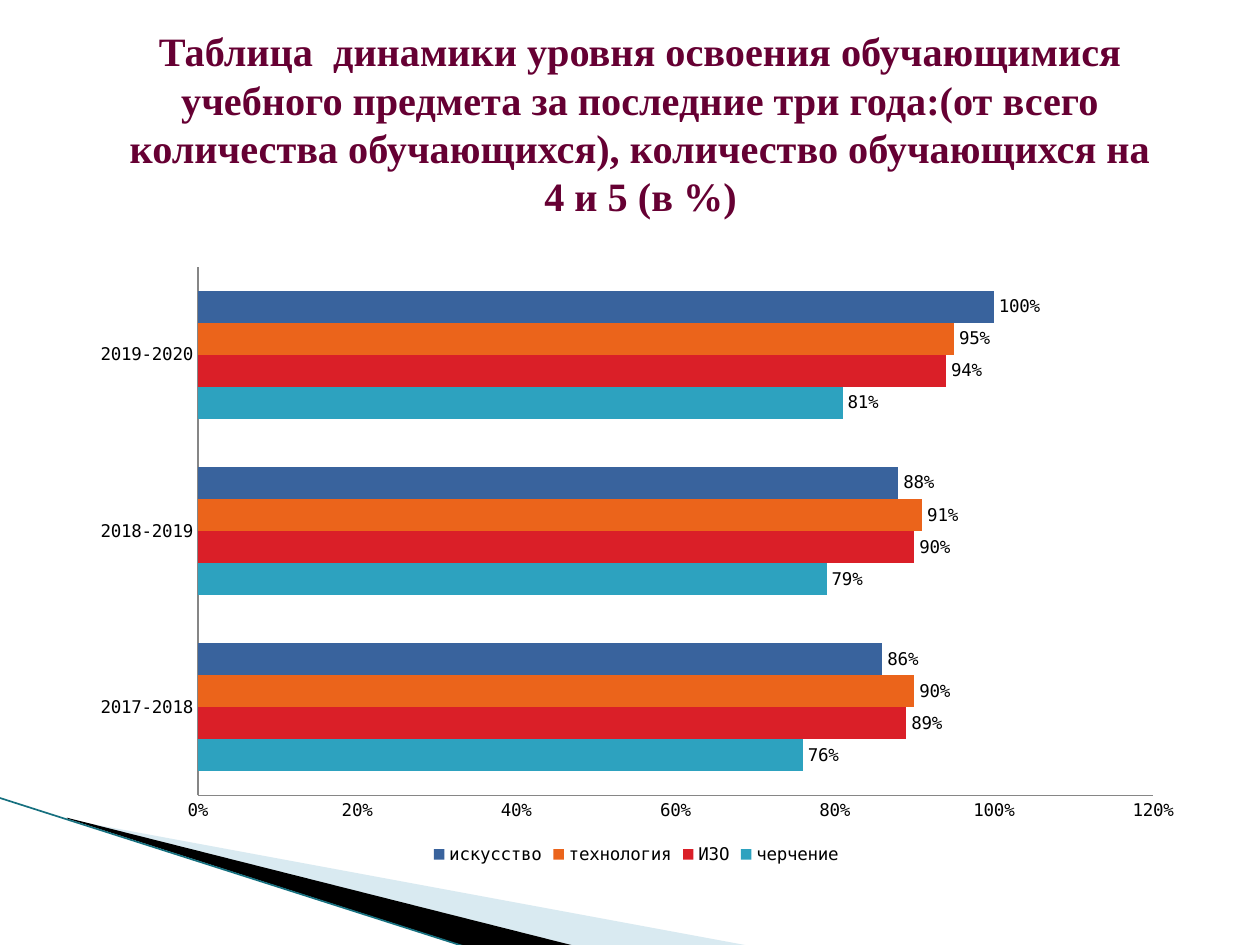
from dataclasses import dataclass

from lxml import etree
from pptx import Presentation
from pptx.chart.data import CategoryChartData
from pptx.dml.color import RGBColor
from pptx.enum.chart import XL_CHART_TYPE, XL_LABEL_POSITION, XL_LEGEND_POSITION, XL_TICK_MARK
from pptx.enum.shapes import MSO_CONNECTOR
from pptx.enum.text import MSO_ANCHOR, MSO_AUTO_SIZE, PP_ALIGN
from pptx.oxml.ns import qn
from pptx.util import Pt

BAR_CLUSTERED = XL_CHART_TYPE.BAR_CLUSTERED
LABEL_OUTSIDE = XL_LABEL_POSITION.OUTSIDE_END
LEGEND_BOTTOM = XL_LEGEND_POSITION.BOTTOM
NO_TICK = XL_TICK_MARK.NONE
STRAIGHT = MSO_CONNECTOR.STRAIGHT
MIDDLE = MSO_ANCHOR.MIDDLE
NO_AUTOFIT = MSO_AUTO_SIZE.NONE
CENTER = PP_ALIGN.CENTER

TITLE_ONLY = 5
PERCENT = "0%"
COLORS = {
    "heading": "660033",
    "text": "000000",
    "axis": "868686",
    "pale": "A0CBDC",
    "black": "000000",
    "edge": "16707F",
    "drafting": "2DA2BF",
    "fine_art": "DA1F28",
    "technology": "EB641B",
    "art": "39639D",
}


@dataclass(frozen=True)
class Wedge:
    points: tuple[tuple[float, float], ...]
    color: str
    alpha: int = 100


@dataclass(frozen=True)
class Subject:
    name: str
    shares: tuple[float, ...]
    color: str


WEDGES = (
    Wedge(((39.6, 468.5), (428.4, 540.5), (328.3, 540.5), (39.6, 468)), "pale", 40),
    Wedge(((38.2, 467.3), (329, 540.7), (267.8, 541.4), (38.9, 468)), "black"),
)
YEARS = ("2017-2018", "2018-2019", "2019-2020")
SUBJECTS = (
    Subject("черчение", (0.76, 0.79, 0.81), "drafting"),
    Subject("ИЗО", (0.89, 0.9, 0.94), "fine_art"),
    Subject("технология", (0.9, 0.91, 0.95), "technology"),
    Subject("искусство", (0.86, 0.88, 1), "art"),
)
HEADING = (
    "Таблица  динамики уровня освоения обучающимися учебного предмета "
    "за последние три года:(от всего количества обучающихся), "
    "количество обучающихся на 4 и 5 (в %)"
)


def rgb(name: str) -> RGBColor:
    return RGBColor.from_string(COLORS[name])


def write(frame, text: str, *, size: float, font: str, color: str, bold=False, align=CENTER) -> None:
    paragraph = frame.paragraphs[0]
    paragraph.alignment = align
    paragraph.space_before = Pt(0)
    run = paragraph.add_run()
    run.text = text
    run.font.size = Pt(size)
    run.font.name = font
    run.font.bold = bold
    run.font.color.rgb = rgb(color)


def draw_wedge(slide, wedge: Wedge) -> None:
    start, *rest = [(Pt(x), Pt(y)) for x, y in wedge.points]
    builder = slide.shapes.build_freeform(*start)
    builder.add_line_segments(rest)
    outline = builder.convert_to_shape()
    outline.shadow.inherit = False
    outline.line.fill.background()
    outline.fill.solid()
    outline.fill.fore_color.rgb = rgb(wedge.color)
    if wedge.alpha < 100:
        tint = outline.fill._xPr.find(".//" + qn("a:srgbClr"))
        etree.SubElement(tint, qn("a:alpha")).set("val", str(wedge.alpha * 1000))


def draw_edge(slide) -> None:
    edge = slide.shapes.add_connector(STRAIGHT, Pt(-0.7), Pt(455.8), Pt(267.1), Pt(541.4))
    edge.line.color.rgb = rgb("edge")
    edge.line.width = Pt(0.95)
    etree.SubElement(edge._element.spPr, qn("a:effectLst"))


def draw_heading(slide) -> None:
    title = slide.shapes.title
    title.left, title.top, title.width, title.height = Pt(65.5), Pt(31.7), Pt(601.2), Pt(96.5)
    frame = title.text_frame
    frame.word_wrap = True
    frame.auto_size = NO_AUTOFIT
    frame.vertical_anchor = MIDDLE
    frame.margin_bottom = Pt(22.6)
    write(frame, HEADING, size=23, font="Times New Roman", color="heading", bold=True)


def place_plot(chart, **shares: float) -> None:
    plot_area = chart._chartSpace.find(".//" + qn("c:plotArea"))
    layout = plot_area.find(qn("c:layout"))
    if layout is None:
        layout = etree.Element(qn("c:layout"))
        plot_area.insert(0, layout)
    manual = etree.SubElement(layout, qn("c:manualLayout"))
    settings = {"layoutTarget": "inner", "xMode": "edge", "yMode": "edge", **shares}
    for tag, value in settings.items():
        etree.SubElement(manual, qn(f"c:{tag}")).set("val", str(value))


def format_axis(axis) -> None:
    axis.major_tick_mark = axis.minor_tick_mark = NO_TICK
    axis.has_major_gridlines = False
    axis.format.line.color.rgb = rgb("axis")
    axis.format.line.width = Pt(0.75)


def draw_chart(slide) -> None:
    results = CategoryChartData(number_format=PERCENT)
    results.categories = YEARS
    for subject in SUBJECTS:
        results.add_series(subject.name, subject.shares)
    chart = slide.shapes.add_chart(
        BAR_CLUSTERED, Pt(42.5), Pt(145.4), Pt(642.2), Pt(351.4), results
    ).chart
    chart.has_title = False
    chart.font.size = Pt(10)
    chart.font.name = "DejaVu Sans Mono"
    chart.font.color.rgb = rgb("text")
    chart.has_legend = True
    chart.legend.position = LEGEND_BOTTOM
    chart.legend.include_in_layout = False

    format_axis(chart.category_axis)
    share_axis = chart.value_axis
    format_axis(share_axis)
    share_axis.minimum_scale, share_axis.maximum_scale = 0, 1.2
    share_axis.major_unit = 0.2
    share_axis.tick_labels.number_format = PERCENT
    share_axis.tick_labels.number_format_is_linked = False

    plot = chart.plots[0]
    plot.gap_width = 150
    plot.vary_by_categories = False
    for subject, bars in zip(SUBJECTS, plot.series):
        bars.format.fill.solid()
        bars.format.fill.fore_color.rgb = rgb(subject.color)
        labels = bars.data_labels
        labels.show_value = True
        labels.number_format = PERCENT
        labels.number_format_is_linked = False
        labels.position = LABEL_OUTSIDE
    place_plot(chart, x=0.11, y=0.02, w=0.85, h=0.86)


def main() -> None:
    presentation = Presentation()
    presentation.slide_width, presentation.slide_height = Pt(720), Pt(540)
    slide = presentation.slides.add_slide(presentation.slide_layouts[TITLE_ONLY])
    for wedge in WEDGES:
        draw_wedge(slide, wedge)
    draw_edge(slide)
    draw_heading(slide)
    draw_chart(slide)
    presentation.save("out.pptx")


if __name__ == "__main__":
    main()
